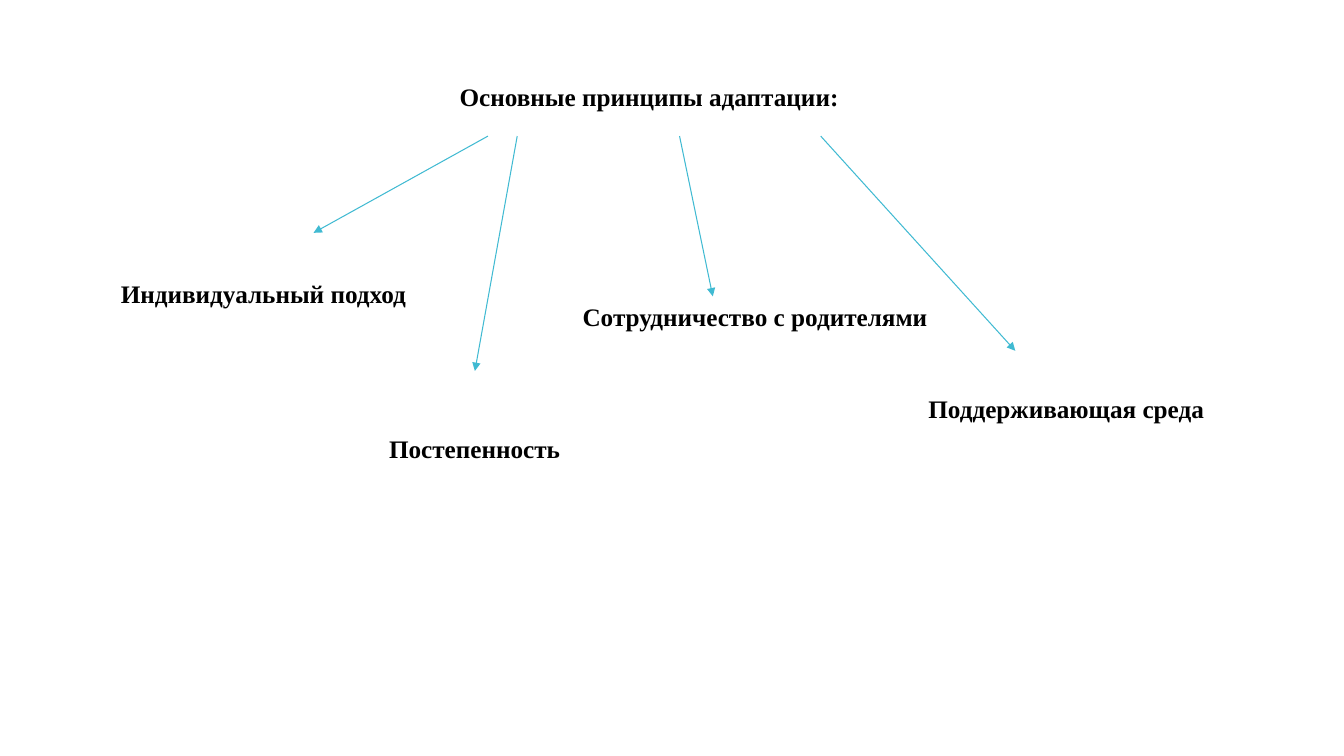
from lxml.etree import SubElement
from pptx import Presentation
from pptx.dml.color import RGBColor
from pptx.enum.shapes import MSO_CONNECTOR
from pptx.enum.text import MSO_AUTO_SIZE
from pptx.oxml.ns import qn
from pptx.util import Inches, Pt

COLORS = {"background": "FFFFFF", "text": "000000", "arrow": "40BAD2"}
FONT = "Times New Roman"
ARROW_TOP = 1.35
PRINCIPLES = [
    ("Индивидуальный подход", (1.1, 2.71, 3.06), 4.84, (3.11, 2.31)),
    ("Постепенность", (3.76, 4.25, 1.92), 5.13, (4.71, 3.68)),
    ("Сотрудничество с родителями", (5.68, 2.94, 3.66), 6.74, (7.07, 2.94)),
    ("Поддерживающая среда", (9.11, 3.85, 2.96), 8.14, (10.07, 3.48)),
]


def add_label(slide, wording, left, top, width, height=0.4):
    """Add a bold one-line label and return its paragraph."""
    label = slide.shapes.add_textbox(
        Inches(left), Inches(top), Inches(width), Inches(height))
    frame = label.text_frame
    frame.word_wrap = False
    frame.auto_size = MSO_AUTO_SIZE.SHAPE_TO_FIT_TEXT
    paragraph = frame.paragraphs[0]
    run = paragraph.add_run()
    run.text = wording
    run.font.name = FONT
    run.font.size = Pt(18)
    run.font.bold = True
    run.font.color.rgb = RGBColor.from_string(COLORS["text"])
    return paragraph


def add_arrow(slide, start_x, tip):
    """Add an arrow from below the heading to a principle."""
    tip_x, tip_y = tip
    arrow = slide.shapes.add_connector(
        MSO_CONNECTOR.STRAIGHT, Inches(start_x), Inches(ARROW_TOP),
        Inches(tip_x), Inches(tip_y))
    arrow.line.color.rgb = RGBColor.from_string(COLORS["arrow"])
    arrow.line.width = Pt(0.75)
    SubElement(arrow.line._get_or_add_ln(), qn("a:tailEnd"), type="triangle")
    SubElement(arrow._element.spPr, qn("a:effectLst"))


def main():
    """Build the slide of adaptation principles."""
    deck = Presentation()
    deck.slide_width = Inches(13.33)
    deck.slide_height = Inches(7.5)
    slide = deck.slides.add_slide(deck.slide_layouts[6])
    backdrop = slide.background.fill
    backdrop.solid()
    backdrop.fore_color.rgb = RGBColor.from_string(COLORS["background"])

    heading = add_label(slide, "Основные принципы адаптации:", 4.46, 0.74, 4, 0.43)
    heading.line_spacing = 1.07
    heading.space_after = Pt(8)
    for wording, place, _, _ in PRINCIPLES:
        add_label(slide, wording, *place)
    for _, _, start_x, tip in PRINCIPLES:
        add_arrow(slide, start_x, tip)

    deck.save("out.pptx")


if __name__ == "__main__":
    main()
